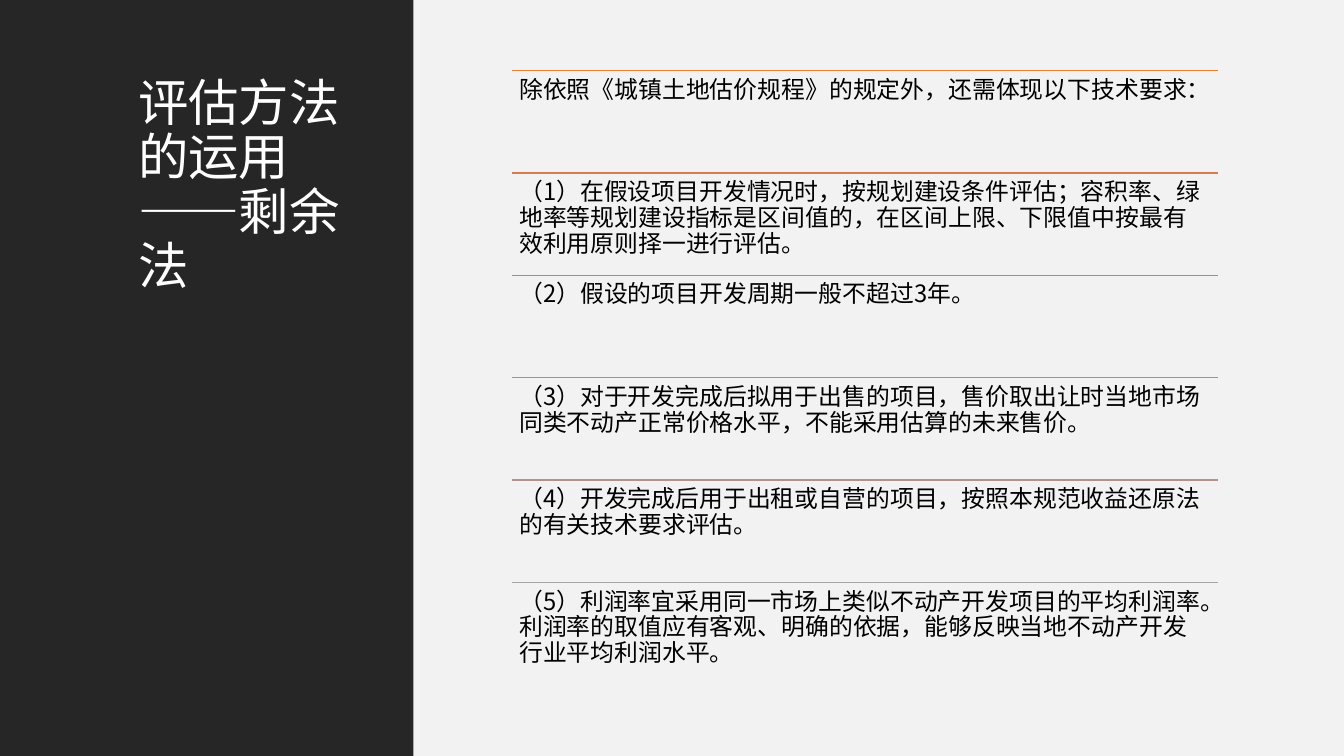
import dataclasses

import lxml.etree
import pptx
import pptx.dml.color
import pptx.enum.lang
import pptx.enum.shapes
import pptx.enum.text
import pptx.oxml.ns
import pptx.util

Inches = pptx.util.Inches
FONT = "Noto Sans CJK SC"
COLORS = {
    "panel": "F2F2F2",
    "sidebar": "262626",
    "title": "FFFFFF",
    "text": "000000",
}
TITLE = "评估方法的运用——剩余法"
LIST_LEFT, LIST_TOP, LIST_WIDTH, ROW_HEIGHT = 5.08, 0.7, 7, 1.016


@dataclasses.dataclass
class Panel:
    left: float
    width: float
    color: str


@dataclasses.dataclass
class Requirement:
    text: str
    line_color: str


PANELS = [
    Panel(4.09, 9.24, COLORS["panel"]),
    Panel(0, 4.1, COLORS["sidebar"]),
]
REQUIREMENTS = [
    Requirement("除依照《城镇土地估价规程》的规定外，还需体现以下技术要求：", "ED7D31"),
    Requirement("（1）在假设项目开发情况时，按规划建设条件评估；容积率、绿地率等规划建设指标"
                "是区间值的，在区间上限、下限值中按最有效利用原则择一进行评估。", "DC7A4B"),
    Requirement("（2）假设的项目开发周期一般不超过3年。", "CC7D64"),
    Requirement("（3）对于开发完成后拟用于出售的项目，售价取出让时当地市场同类不动产正常价格"
                "水平，不能采用估算的未来售价。", "BD867B"),
    Requirement("（4）开发完成后用于出租或自营的项目，按照本规范收益还原法的有关技术要求评估。",
                "B09391"),
    Requirement("（5）利润率宜采用同一市场上类似不动产开发项目的平均利润率。利润率的取值应有"
                "客观、明确的依据，能够反映当地不动产开发行业平均利润水平。", "A5A5A5"),
]


def rgb(color: str) -> pptx.dml.color.RGBColor:
    return pptx.dml.color.RGBColor.from_string(color)


def set_all(target, values: dict) -> None:
    for name, value in values.items():
        setattr(target, name, value)


def write_text(sp, text: str, size: float, color: str, inset: float) -> None:
    """Fill a shape with one left-aligned, top-anchored paragraph."""
    tf = sp.text_frame
    set_all(tf, {
        "word_wrap": True,
        "auto_size": pptx.enum.text.MSO_AUTO_SIZE.NONE,
        "vertical_anchor": pptx.enum.text.MSO_ANCHOR.TOP,
        "margin_left": Inches(inset),
        "margin_right": Inches(inset),
        "margin_top": Inches(min(inset, 0.07)),
        "margin_bottom": Inches(min(inset, 0.07)),
    })
    p = tf.paragraphs[0]
    set_all(p, {"alignment": pptx.enum.text.PP_ALIGN.LEFT, "line_spacing": 0.9})
    r = p.add_run()
    r.text = text
    set_all(r.font, {
        "name": FONT,
        "size": pptx.util.Pt(size),
        "language_id": pptx.enum.lang.MSO_LANGUAGE_ID.SIMPLIFIED_CHINESE,
    })
    r.font.color.rgb = rgb(color)
    ea = lxml.etree.SubElement(r._r.get_or_add_rPr(), pptx.oxml.ns.qn("a:ea"))
    ea.set("typeface", FONT)


def add_panel(shapes, panel: Panel) -> None:
    sp = shapes.add_shape(
        pptx.enum.shapes.MSO_SHAPE.RECTANGLE,
        Inches(panel.left), 0, Inches(panel.width), Inches(7.5),
    )
    sp.shadow.inherit = False
    sp.fill.solid()
    sp.fill.fore_color.rgb = rgb(panel.color)
    sp.line.fill.background()


def add_requirement(shapes, item: Requirement, top: float) -> None:
    """Draw a rule across the list with the item's text below it."""
    left, y, width = Inches(LIST_LEFT), Inches(top), Inches(LIST_WIDTH)
    line = shapes.add_connector(
        pptx.enum.shapes.MSO_CONNECTOR.STRAIGHT, left, y, left + width, y
    )
    line.line.color.rgb = rgb(item.line_color)
    line.line.width = pptx.util.Pt(1)
    lxml.etree.SubElement(line._element.spPr, pptx.oxml.ns.qn("a:effectLst"))
    sp = shapes.add_textbox(left, y, width, Inches(ROW_HEIGHT))
    write_text(sp, item.text, 17, COLORS["text"], 0.07)


def main() -> None:
    prs = pptx.Presentation()
    set_all(prs, {"slide_width": Inches(13.33), "slide_height": Inches(7.5)})
    s = prs.slides.add_slide(prs.slide_layouts.get_by_name("Title Only"))
    title = s.shapes.title
    for panel in PANELS:
        add_panel(s.shapes, panel)

    # Bring the title in front of the panels
    s.shapes._spTree.append(title._element)
    set_all(title, {
        "left": Inches(1.27), "top": Inches(0.7),
        "width": Inches(2.4), "height": Inches(6.1),
    })
    write_text(title, TITLE, 36, COLORS["title"], 0.1)

    group = s.shapes.add_group_shape()
    for i, item in enumerate(REQUIREMENTS):
        add_requirement(group.shapes, item, LIST_TOP + i * ROW_HEIGHT)
    prs.save("out.pptx")


if __name__ == "__main__":
    main()
